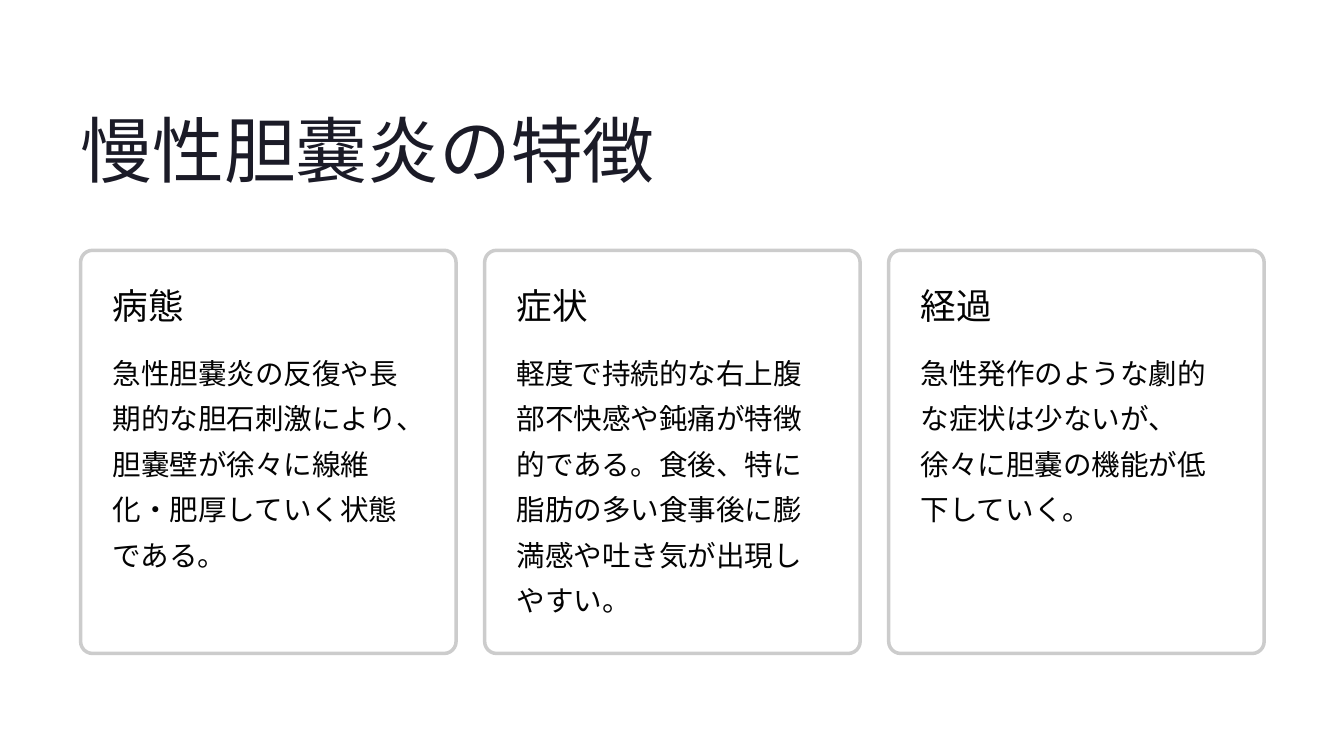
import dataclasses

import pptx
import pptx.dml.color
import pptx.enum.lang
import pptx.enum.shapes
import pptx.enum.text
import pptx.oxml.ns
import pptx.util
from lxml import etree

Inches = pptx.util.Inches
Pt = pptx.util.Pt
Color = pptx.dml.color.RGBColor.from_string


@dataclasses.dataclass(frozen=True)
class TextStyle:
    font: str
    size: float
    leading: float
    color: str


@dataclasses.dataclass(frozen=True)
class Theme:
    title: TextStyle = TextStyle("Inter", 61.5, 77, "1B1B27")
    heading: TextStyle = TextStyle("Inter", 30.5, 38.5, "030303")
    body: TextStyle = TextStyle("Karla", 24.5, 39, "030303")
    card_fill: str = "FFFFFF"
    card_opacity: int = 95
    card_line: str = "CCCCCC"
    card_line_width: float = 3


THEME = Theme()
TITLE = "慢性胆嚢炎の特徴"
CARDS = [
    ("病態", "急性胆嚢炎の反復や長期的な胆石刺激により、胆嚢壁が徐々に線維化・肥厚していく状態である。"),
    ("症状", "軽度で持続的な右上腹部不快感や鈍痛が特徴的である。食後、特に脂肪の多い食事後に膨満感や吐き気が出現しやすい。"),
    ("経過", "急性発作のような劇的な症状は少ないが、徐々に胆嚢の機能が低下していく。"),
]


def place(shape, left, top, width, height):
    shape.left, shape.top = Inches(left), Inches(top)
    shape.width, shape.height = Inches(width), Inches(height)


def write(shape, text, style, wrap):
    frame = shape.text_frame
    frame.text = text
    frame.margin_left = frame.margin_right = 0
    frame.margin_top = frame.margin_bottom = 0
    frame.word_wrap = wrap
    frame.auto_size = pptx.enum.text.MSO_AUTO_SIZE.NONE
    frame.vertical_anchor = pptx.enum.text.MSO_ANCHOR.TOP
    para = frame.paragraphs[0]
    para.alignment = pptx.enum.text.PP_ALIGN.LEFT
    para.line_spacing = Pt(style.leading)
    para.space_before = Pt(0)
    font = para.runs[0].font
    font.name = style.font
    font.size = Pt(style.size)
    font.color.rgb = Color(style.color)
    font.language_id = pptx.enum.lang.MSO_LANGUAGE_ID.JAPANESE
    latin = font._element.find(pptx.oxml.ns.qn("a:latin"))
    east_asian = etree.Element(pptx.oxml.ns.qn("a:ea"), typeface=style.font)
    latin.addnext(east_asian)


def add_title(page, left, top, width, height):
    title = page.shapes.title
    place(title, left, top, width, height)
    write(title, TITLE, THEME.title, wrap=False)


def add_text(page, left, top, width, height, text, style, wrap):
    box = page.shapes.add_textbox(0, 0, 0, 0)
    place(box, left, top, width, height)
    write(box, text, style, wrap)


def add_card(page, left, top, width, height, heading, body):
    panel = page.shapes.add_shape(
        pptx.enum.shapes.MSO_SHAPE.ROUNDED_RECTANGLE,
        Inches(left), Inches(top), Inches(width), Inches(height))
    panel.adjustments[0] = 0.032
    panel.shadow.inherit = False
    panel.fill.solid()
    panel.fill.fore_color.rgb = Color(THEME.card_fill)
    fill_color = panel._element.spPr.find(
        ".//" + pptx.oxml.ns.qn("a:srgbClr"))
    etree.SubElement(fill_color, pptx.oxml.ns.qn("a:alpha"),
                     val=str(THEME.card_opacity * 1000))
    panel.line.color.rgb = Color(THEME.card_line)
    panel.line.width = Pt(THEME.card_line_width)

    padding, body_offset = 0.38, 1.12
    text_width = width - 2 * padding
    add_text(page, left + padding, top + padding, text_width, 0.54,
             heading, THEME.heading, wrap=False)
    add_text(page, left + padding, top + body_offset, text_width,
             height - body_offset - padding, body, THEME.body, wrap=True)


def add_cards(page, left, top, width, height, gap=0.34):
    card_width = (width - gap * (len(CARDS) - 1)) / len(CARDS)
    for index, (heading, body) in enumerate(CARDS):
        add_card(page, left + index * (card_width + gap), top,
                 card_width, height, heading, body)


def main():
    deck = pptx.Presentation()
    deck.slide_width, deck.slide_height = Inches(16), Inches(9)
    page = deck.slides.add_slide(deck.slide_layouts.get_by_name("Title Only"))
    add_title(page, 0.96, 1.22, 8.57, 1.07)
    add_cards(page, 0.96, 2.98, 14.09, 4.8)
    deck.save("out.pptx")


if __name__ == "__main__":
    main()
